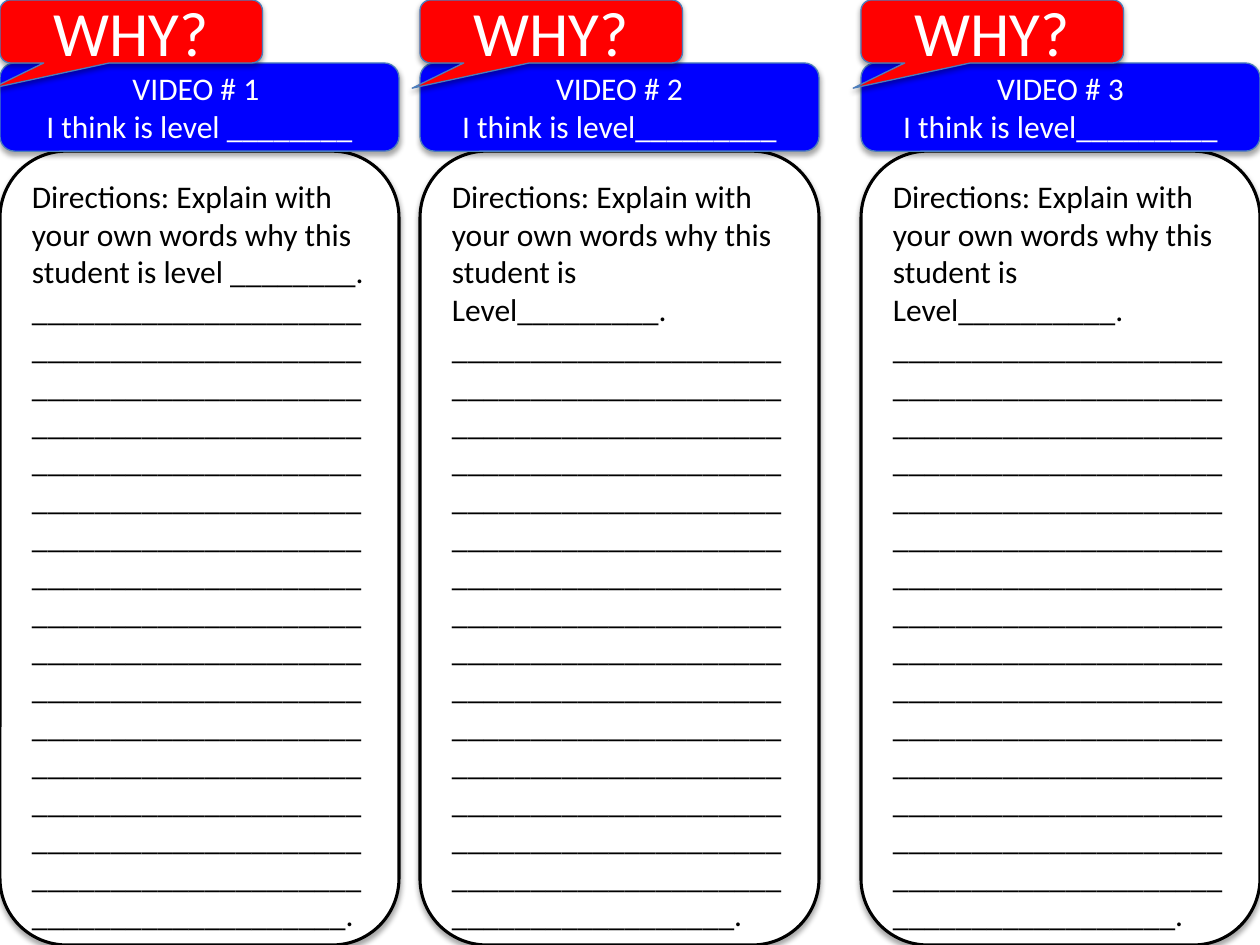
from dataclasses import dataclass

from pptx import Presentation
from pptx.dml.color import RGBColor
from pptx.enum.shapes import MSO_SHAPE
from pptx.enum.text import MSO_ANCHOR, PP_ALIGN
from pptx.util import Pt

ROUNDED = MSO_SHAPE.ROUNDED_RECTANGLE
CALLOUT = MSO_SHAPE.ROUNDED_RECTANGULAR_CALLOUT
TOP, MIDDLE = MSO_ANCHOR.TOP, MSO_ANCHOR.MIDDLE
LEFT, CENTER = PP_ALIGN.LEFT, PP_ALIGN.CENTER

SLIDE_W, SLIDE_H = 720, 540
COLUMN_W, CALLOUT_W = 228, 150
HEADER_TOP, BODY_TOP = 36, 86.4
CALLOUT_TAIL = (-0.53, 0.9, 0.17)


@dataclass(frozen=True)
class Theme:
    font: str = "Calibri"
    text_size: int = 18
    question_size: int = 36
    paper: RGBColor = RGBColor(255, 255, 255)
    ink: RGBColor = RGBColor(0, 0, 0)
    header: RGBColor = RGBColor(0, 0, 255)
    question: RGBColor = RGBColor(255, 0, 0)
    edge: RGBColor = RGBColor(0x4B, 0x7E, 0xBC)


class Worksheet:
    def __init__(self, slide, theme):
        self.slide = slide
        self.theme = theme

    def panel(self, kind, box, fill, edge, edge_width):
        """Add a filled shape that keeps the theme's soft shadow."""
        shape = self.slide.shapes.add_shape(kind, *map(Pt, box))
        shape.fill.solid()
        shape.fill.fore_color.rgb = fill
        shape.line.color.rgb = edge
        shape.line.width = Pt(edge_width)
        return shape

    def set_lines(self, shape, lines, size, color, align, anchor):
        frame = shape.text_frame
        frame.word_wrap = True
        frame.vertical_anchor = anchor
        frame.text = "\n".join(lines)
        for paragraph in frame.paragraphs:
            paragraph.alignment = align
            paragraph.font.name = self.theme.font
            paragraph.font.size = Pt(size)
            paragraph.font.color.rgb = color

    def answer_area(self, left, directions, blank_length):
        theme = self.theme
        box = (left, BODY_TOP, COLUMN_W, SLIDE_H - BODY_TOP)
        area = self.panel(ROUNDED, box, theme.paper, theme.ink, 1.75)
        lines = [directions, "_" * blank_length + "."]
        self.set_lines(area, lines, theme.text_size, theme.ink, LEFT, TOP)

    def video_header(self, left, lines):
        theme = self.theme
        box = (left, HEADER_TOP, COLUMN_W, BODY_TOP - HEADER_TOP)
        header = self.panel(ROUNDED, box, theme.header, theme.edge, 0.75)
        self.set_lines(header, lines, theme.text_size, theme.paper, CENTER, MIDDLE)

    def question_callout(self, left, question):
        theme = self.theme
        box = (left, 0, CALLOUT_W, HEADER_TOP)
        callout = self.panel(CALLOUT, box, theme.question, theme.edge, 0.75)
        for index, value in enumerate(CALLOUT_TAIL):
            callout.adjustments[index] = value
        self.set_lines(callout, [question], theme.question_size, theme.paper, CENTER, MIDDLE)


def main():
    # left edge, video title, level guess, end of directions, answer blank length
    columns = [
        (0, "VIDEO # 1 ", " " + "_" * 8, "level " + "_" * 8, 356),
        (240, "VIDEO # 2", "_" * 9, "Level" + "_" * 9, 333),
        (SLIDE_W - COLUMN_W, "VIDEO # 3", "_" * 9, "Level" + "_" * 10, 333),
    ]
    prs = Presentation()
    prs.slide_width, prs.slide_height = Pt(SLIDE_W), Pt(SLIDE_H)
    blank_layout = prs.slide_layouts[6]
    sheet = Worksheet(prs.slides.add_slide(blank_layout), Theme())

    for left, video, guess, level, blank_length in columns:
        directions = f"Directions: Explain with your own words why this student is {level}."
        sheet.answer_area(left, directions, blank_length)
        sheet.video_header(left, [video, f"I think is level{guess}"])
        sheet.question_callout(left, "WHY?")

    prs.save("out.pptx")


if __name__ == "__main__":
    main()
